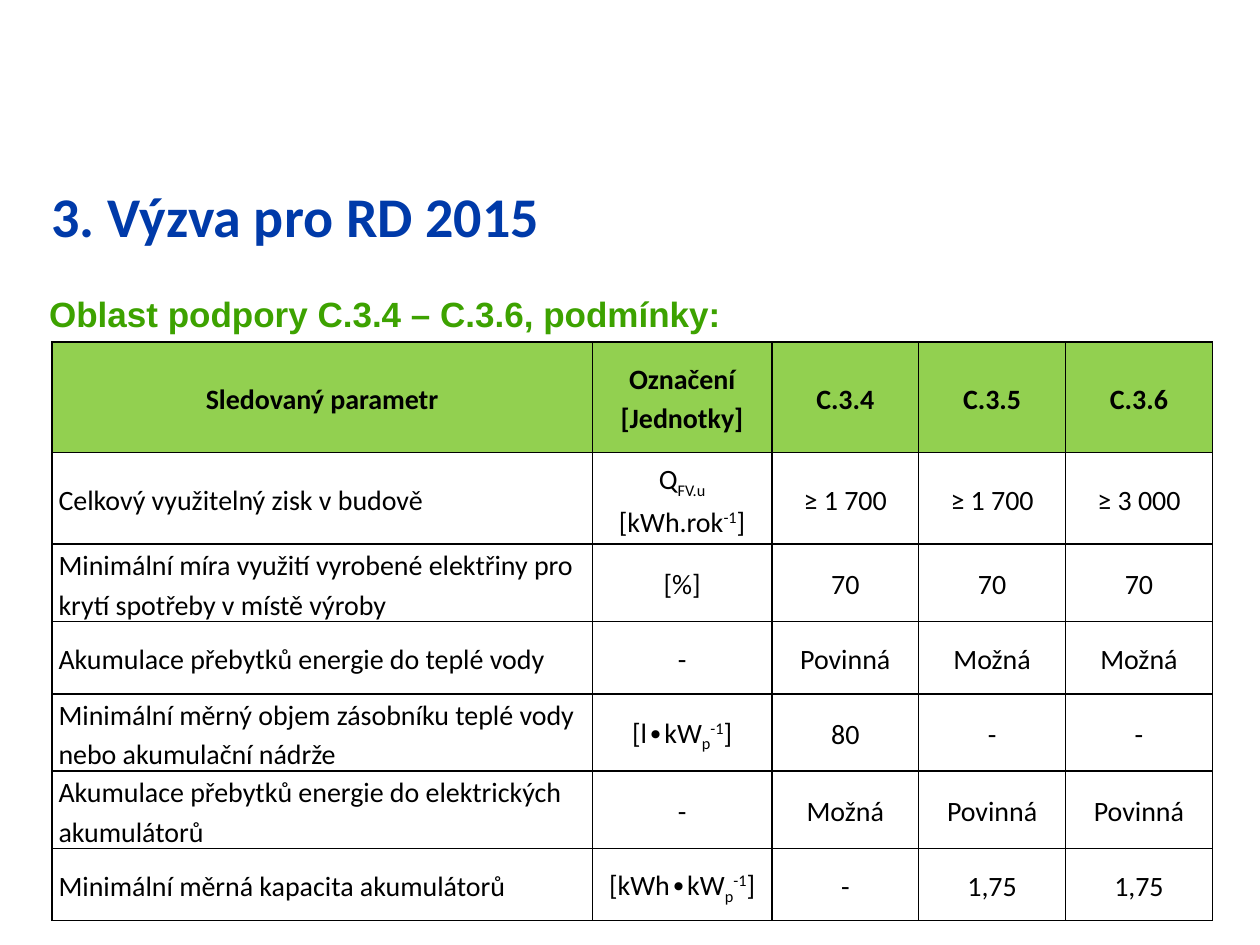
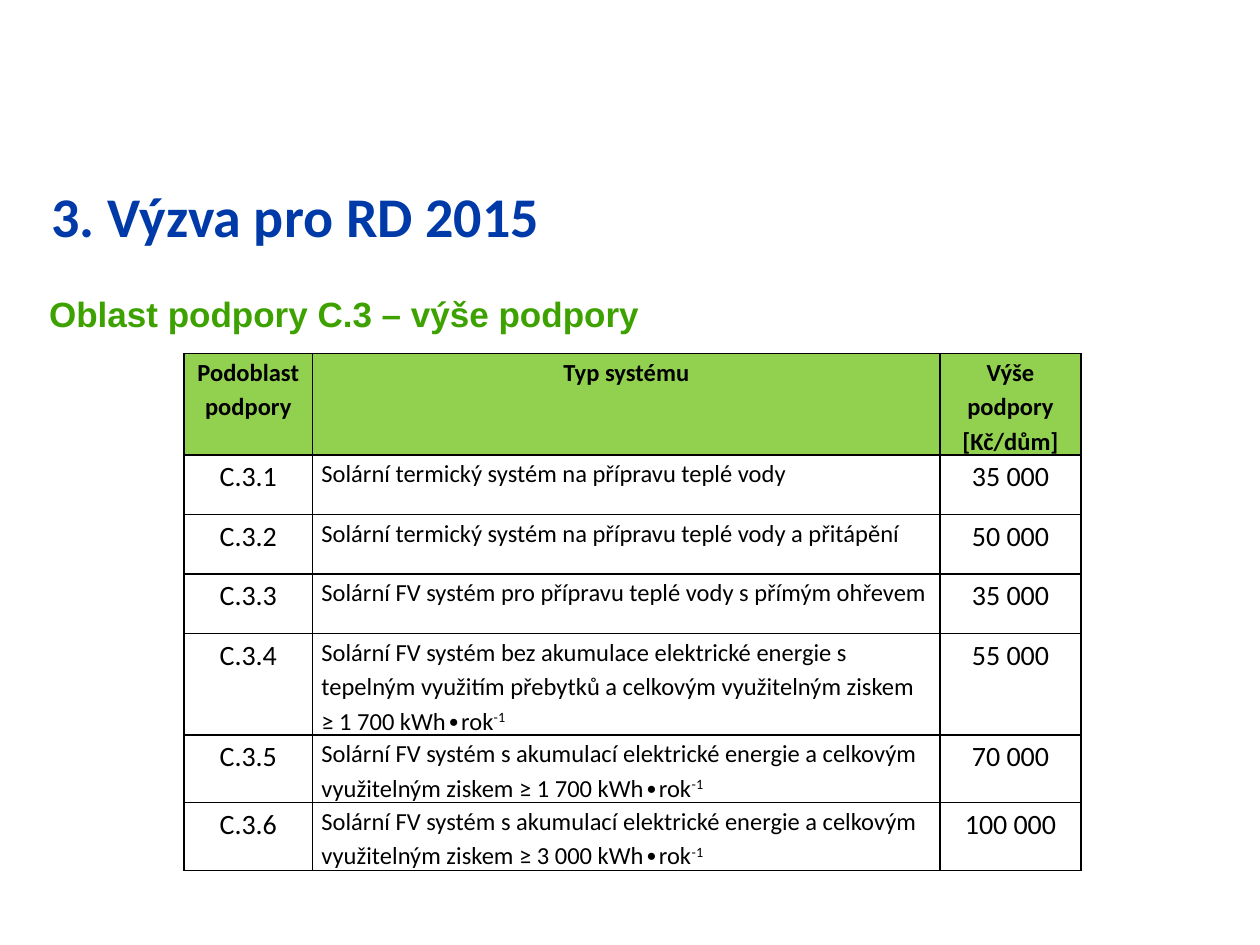
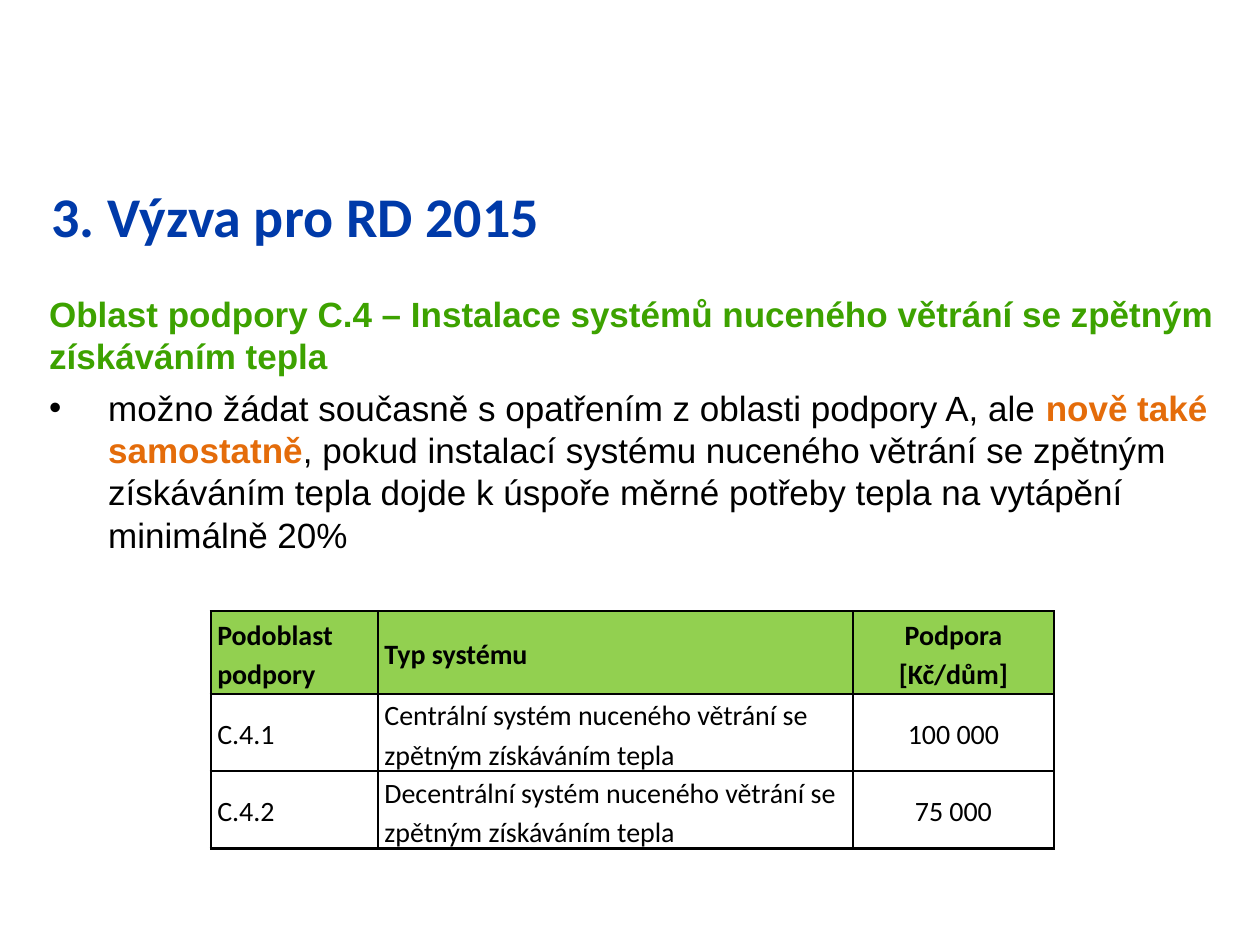
"""Build three slides on the 2015 call for family houses: support areas C.3 and C.4."""
from lxml import etree
from pptx import Presentation
from pptx import util as u
from pptx.dml.color import RGBColor
from pptx.enum import text as t
from pptx.oxml import ns

BLUE = RGBColor(0x00, 0x3A, 0xA9)
GREEN = RGBColor(0x3D, 0xA2, 0x00)
ORANGE = RGBColor(0xE4, 0x6C, 0x0A)
BLACK = RGBColor(0x00, 0x00, 0x00)
HEADER_FILL = RGBColor(0x92, 0xD0, 0x50)
TITLE = "3. Výzva pro RD 2015"
SUB, SUPER = -25, 30
PER_PEAK_KW = [("p", SUB), ("-1", SUPER), ("]", 0)]
PER_YEAR = ("-1", SUPER)


def write(para, text, size=16, font="Calibri", color=BLACK, bold=False, baseline=0):
    """Add text to a paragraph in the given format, breaking lines at newlines."""
    for index, line in enumerate(text.split("\n")):
        if index:
            para.add_line_break()
        if line:
            span = para.add_run()
            span.text = line
            span.font.size = u.Pt(size)
            span.font.name = font
            span.font.color.rgb = color
            span.font.bold = bold
            if baseline:
                span.font._element.set("baseline", str(baseline * 1000))


conditions = dict(
    heading="Oblast podpory C.3.4 – C.3.6, podmínky:",
    bullet=[],
    left=1.05, top=6.89, columns=[10.89, 3.62, 2.96, 2.96, 2.96], heights=[2.23, 1.85] + [1.46] * 5,
    inset=0.13, anchor=t.MSO_ANCHOR.MIDDLE, outline=1,
    left_columns=[0], centred_header=True, small_columns=[], header_size=16,
    rows=[
        ["Sledovaný parametr", "Označení [Jednotky]", "C.3.4", "C.3.5", "C.3.6"],
        ["Celkový využitelný zisk v budově",
         [("Q", 0), ("FV.u\n", SUB), ("[kWh.rok", 0), PER_YEAR, ("]", 0)], "≥ 1 700", "≥ 1 700", "≥ 3 000"],
        ["Minimální míra využití vyrobené elektřiny pro krytí spotřeby v místě výroby", "[%]", "70", "70", "70"],
        ["Akumulace přebytků energie do teplé vody", "-", "Povinná", "Možná", "Možná"],
        ["Minimální měrný objem zásobníku teplé vody nebo akumulační nádrže",
         [("[l∙kW", 0)] + PER_PEAK_KW, "80", "-", "-"],
        ["Akumulace přebytků energie do elektrických akumulátorů", "-", "Možná", "Povinná", "Povinná"],
        ["Minimální měrná kapacita akumulátorů", [("[kWh∙kW", 0)] + PER_PEAK_KW, "-", "1,75", "1,75"],
    ])

solar_support = dict(
    heading="Oblast podpory C.3 – výše podpory",
    bullet=[],
    left=3.71, top=7.13, columns=[2.59, 12.65, 2.84], heights=[2.03] + [1.2] * 3 + [1.35] * 3,
    inset=0.18, anchor=t.MSO_ANCHOR.TOP, outline=1,
    left_columns=[1], centred_header=True, small_columns=[1], header_size=14,
    rows=[
        ["Podoblast podpory", "Typ systému", "Výše podpory [Kč/dům]"],
        ["C.3.1", "Solární termický systém na přípravu teplé vody", "35 000"],
        ["C.3.2", "Solární termický systém na přípravu teplé vody a přitápění", "50 000"],
        ["C.3.3", "Solární FV systém pro přípravu teplé vody s přímým ohřevem", "35 000"],
        ["C.3.4", [("Solární FV systém bez akumulace elektrické energie s tepelným využitím přebytků "
                    "a celkovým využitelným ziskem ≥ 1 700 kWh∙rok", 0), PER_YEAR], "55 000"],
        ["C.3.5", [("Solární FV systém s akumulací elektrické energie a celkovým využitelným ziskem "
                    "≥ 1 700 kWh∙rok", 0), PER_YEAR], "70 000"],
        ["C.3.6", [("Solární FV systém s akumulací elektrické energie a celkovým využitelným ziskem "
                    "≥ 3 000 kWh∙rok", 0), PER_YEAR], "100 000"],
    ])

ventilation_support = dict(
    heading="Oblast podpory C.4 – Instalace systémů nuceného větrání se zpětným získáváním tepla",
    bullet=[
        ("možno žádat současně s opatřením z oblasti podpory A, ale ", BLACK, False),
        ("nově také samostatně", ORANGE, True),
        (", pokud instalací systému nuceného větrání se zpětným získáváním tepla dojde "
         "k úspoře měrné potřeby tepla na vytápění minimálně 20%", BLACK, False),
    ],
    left=4.25, top=12.32, columns=[3.37, 9.58, 4.04], heights=[1.67, 1.53, 1.53],
    inset=0.13, anchor=t.MSO_ANCHOR.MIDDLE, outline=1.5,
    left_columns=[0, 1], centred_header=False, small_columns=[], header_size=16,
    rows=[
        ["Podoblast podpory", "Typ systému", "Podpora [Kč/dům]"],
        ["C.4.1", "Centrální systém nuceného větrání se zpětným získáváním tepla", "100 000"],
        ["C.4.2", "Decentrální systém nuceného větrání se zpětným získáváním tepla", "75 000"],
    ])

deck = Presentation()
deck.slide_width, deck.slide_height = u.Cm(25.4), u.Cm(19.05)

for content in (conditions, solar_support, ventilation_support):
    page = deck.slides.add_slide(deck.slide_layouts[6])

    title_box = page.shapes.add_textbox(u.Cm(0.79), u.Cm(3.53), u.Cm(23.9), u.Cm(2.21))
    title_box.text_frame.word_wrap = True
    write(title_box.text_frame.paragraphs[0], TITLE, size=32, color=BLUE, bold=True)

    body_height = 5.59 if content["bullet"] else 1.11
    body_box = page.shapes.add_textbox(u.Cm(0.74), u.Cm(5.77), u.Cm(24), u.Cm(body_height))
    body = body_box.text_frame
    body.word_wrap = True
    para = body.paragraphs[0]
    para.space_after = u.Pt(6)
    write(para, content["heading"], size=20, font="Arial", color=GREEN, bold=True)
    if content["bullet"]:
        para = body.add_paragraph()
        properties = para._p.get_or_add_pPr()
        properties.set("marL", str(u.Cm(1.19)))
        properties.set("indent", str(-u.Cm(1.19)))
        etree.SubElement(properties, ns.qn("a:buFont")).set("typeface", "Arial")
        etree.SubElement(properties, ns.qn("a:buChar")).set("char", "•")
        para.space_after = u.Pt(6)
        for words, color, bold in content["bullet"]:
            write(para, words, size=20, font="Arial", color=color, bold=bold)

    rows, columns, heights = content["rows"], content["columns"], content["heights"]
    table = page.shapes.add_table(
        len(rows), len(columns), u.Cm(content["left"]), u.Cm(content["top"]),
        u.Cm(sum(columns)), u.Cm(sum(heights))).table
    table.first_row = table.horz_banding = False
    for column, width in zip(table.columns, columns):
        column.width = u.Cm(width)
    for row, height in zip(table.rows, heights):
        row.height = u.Cm(height)

    for r, row in enumerate(rows):
        for c, value in enumerate(row):
            cell = table.cell(r, c)
            cell.vertical_anchor = content["anchor"]
            cell.margin_left = cell.margin_right = u.Cm(content["inset"])
            cell.margin_top = cell.margin_bottom = 0

            on_outline = {"lnL": c == 0, "lnR": c == len(columns) - 1,
                          "lnT": r == 0, "lnB": r == len(rows) - 1}
            for side, outer in on_outline.items():
                border = etree.SubElement(cell._tc.get_or_add_tcPr(), ns.qn(f"a:{side}"))
                border.set("w", str(u.Pt(content["outline"] if outer else 1)))
                paint = etree.SubElement(border, ns.qn("a:solidFill"))
                etree.SubElement(paint, ns.qn("a:srgbClr")).set("val", str(BLACK))

            header = r == 0
            if header:
                cell.fill.solid()
                cell.fill.fore_color.rgb = HEADER_FILL
                size = content["header_size"]
            else:
                cell.fill.background()
                size = 14 if c in content["small_columns"] else 16

            para = cell.text_frame.paragraphs[0]
            para.line_spacing = 1.15
            if c not in content["left_columns"] or (header and content["centred_header"]):
                para.alignment = t.PP_ALIGN.CENTER
            pieces = [(value, 0)] if isinstance(value, str) else value
            for words, baseline in pieces:
                write(para, words, size=size, bold=header, baseline=baseline)

deck.save("out.pptx")
